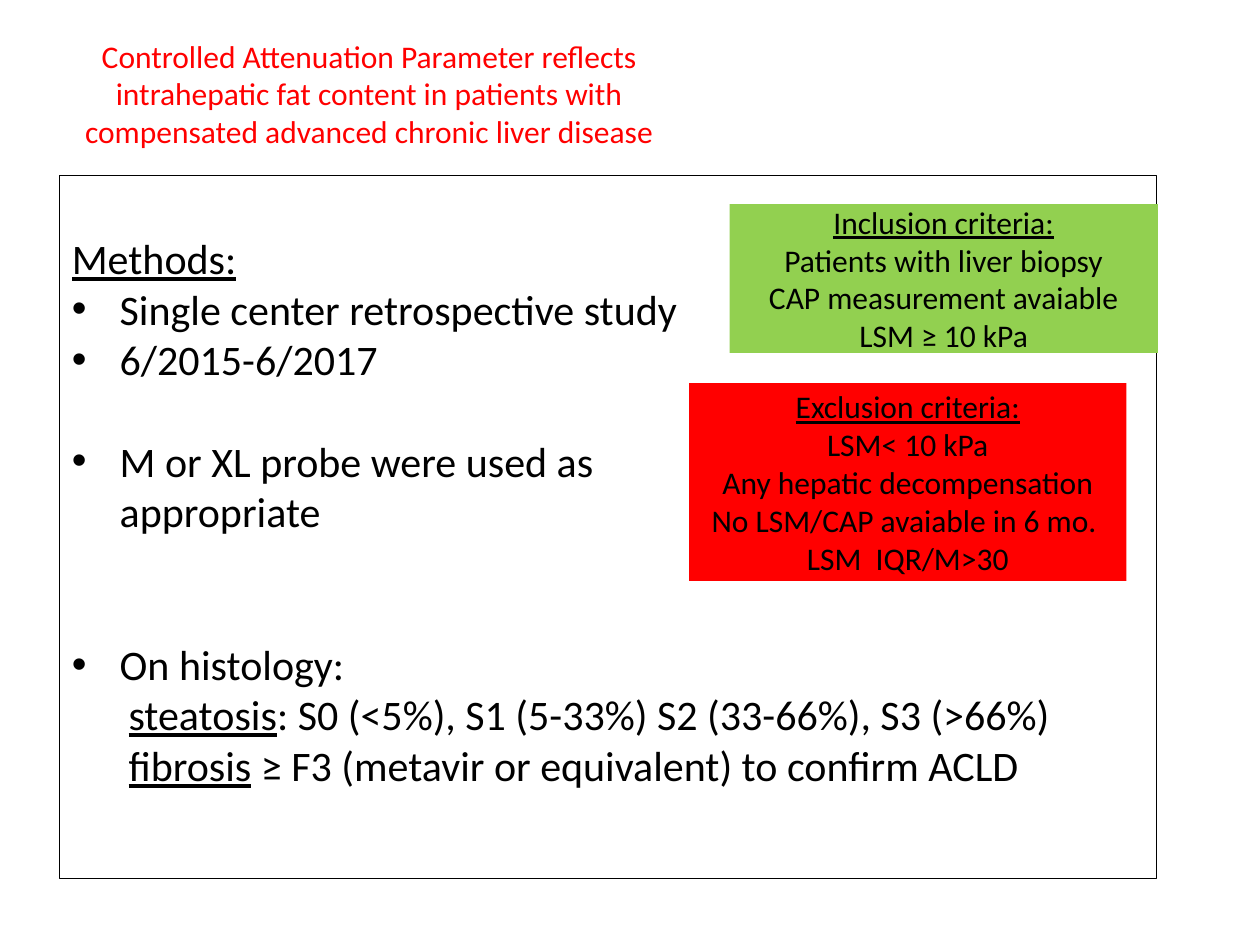
from lxml import etree
from pptx import Presentation
from pptx.dml.color import RGBColor
from pptx.enum.shapes import MSO_SHAPE
from pptx.enum.text import MSO_ANCHOR, MSO_AUTO_SIZE, PP_ALIGN
from pptx.oxml.ns import qn
from pptx.util import Inches, Pt

RECT = MSO_SHAPE.RECTANGLE
TOP, MIDDLE = MSO_ANCHOR.TOP, MSO_ANCHOR.MIDDLE
LEFT, CENTER = PP_ALIGN.LEFT, PP_ALIGN.CENTER
FIXED = MSO_AUTO_SIZE.NONE

BLACK = RGBColor(0, 0, 0)
RED = RGBColor(255, 0, 0)
GREEN = RGBColor(146, 208, 80)

HANG = 0.38
ROW = 29.3


def write(para, text, under="", size=18, color=BLACK, align=LEFT, gap=0):
    para.alignment = align
    para.space_before = Pt(gap)
    para.space_after = Pt(0)
    for part, line in ((under, True), (text, False)):
        if part:
            run = para.add_run()
            run.text = part
            font = run.font
            font.name = "Calibri"
            font.size = Pt(size)
            font.color.rgb = color
            font.underline = line


def indent(para, left, bullet):
    props = para._p.get_or_add_pPr()
    props.set("marL", str(Inches(left)))
    props.set("indent", str(-Inches(left) if bullet else 0))
    if bullet:
        font = etree.SubElement(props, qn("a:buFont"))
        font.set("typeface", "Arial")
        etree.SubElement(props, qn("a:buChar")).set("char", "•")
    else:
        etree.SubElement(props, qn("a:buNone"))


class Deck:
    def __init__(self):
        self.file = Presentation()
        self.file.slide_width = Inches(10)
        self.file.slide_height = Inches(7.5)
        self.slide = self.file.slides.add_slide(self.file.slide_layouts[1])

    def place(self, shape, box, anchor):
        shape.left, shape.top, shape.width, shape.height = map(Inches, box)
        frame = shape.text_frame
        frame.word_wrap = True
        frame.auto_size = FIXED
        frame.vertical_anchor = anchor
        return frame

    def title(self, box, text):
        frame = self.place(self.slide.shapes.title, box, TOP)
        write(frame.paragraphs[0], text, color=RED, align=CENTER)

    def body(self, box, items):
        shape = self.slide.placeholders[1]
        frame = self.place(shape, box, TOP)
        frame.margin_top = Inches(0.05) + Pt(ROW)
        shape.line.color.rgb = BLACK
        shape.line.width = Pt(0.75)
        for i, (under, text, left, bullet, skip) in enumerate(items):
            para = frame.add_paragraph() if i else frame.paragraphs[0]
            write(para, text, under, size=24, gap=skip * ROW)
            indent(para, left, bullet)

    def panel(self, box, fill, head, lines):
        shape = self.slide.shapes.add_shape(RECT, *map(Inches, box))
        shape.shadow.inherit = False
        shape.fill.solid()
        shape.fill.fore_color.rgb = fill
        shape.line.fill.background()
        frame = self.place(shape, box, MIDDLE)
        write(frame.paragraphs[0], "", head, align=CENTER)
        for text in lines:
            write(frame.add_paragraph(), text, align=CENTER)


def main():
    deck = Deck()
    deck.title(
        (0.43, 0.24, 5, 1.01),
        "Controlled Attenuation Parameter reflects intrahepatic fat content "
        "in patients with compensated advanced chronic liver disease",
    )
    deck.body((0.47, 1.39, 8.71, 5.58), [
        ("Methods:", "", 0, False, 0),
        ("", "Single center retrospective study", HANG, True, 0),
        ("", "6/2015-6/2017", HANG, True, 0),
        ("", "M or XL probe were used as", HANG, True, 1),
        ("", "appropriate", HANG, False, 0),
        ("", "On histology:", HANG, True, 2),
        ("steatosis", ": S0 (<5%), S1 (5-33%) S2 (33-66%), S3 (>66%)",
         0.45, False, 0),
        ("fibrosis", " ≥ F3 (metavir or equivalent) to confirm ACLD",
         0.45, False, 0),
    ])
    deck.panel((5.47, 3.04, 3.47, 1.57), RED, "Exclusion criteria:", [
        "LSM< 10 kPa",
        "Any hepatic decompensation",
        "No LSM/CAP avaiable in 6 mo. ",
        "LSM  IQR/M>30",
    ])
    deck.panel((5.79, 1.62, 3.4, 1.18), GREEN, "Inclusion criteria:", [
        "Patients with liver biopsy",
        "CAP measurement avaiable",
        "LSM ≥ 10 kPa",
    ])
    deck.file.save("out.pptx")


if __name__ == "__main__":
    main()
